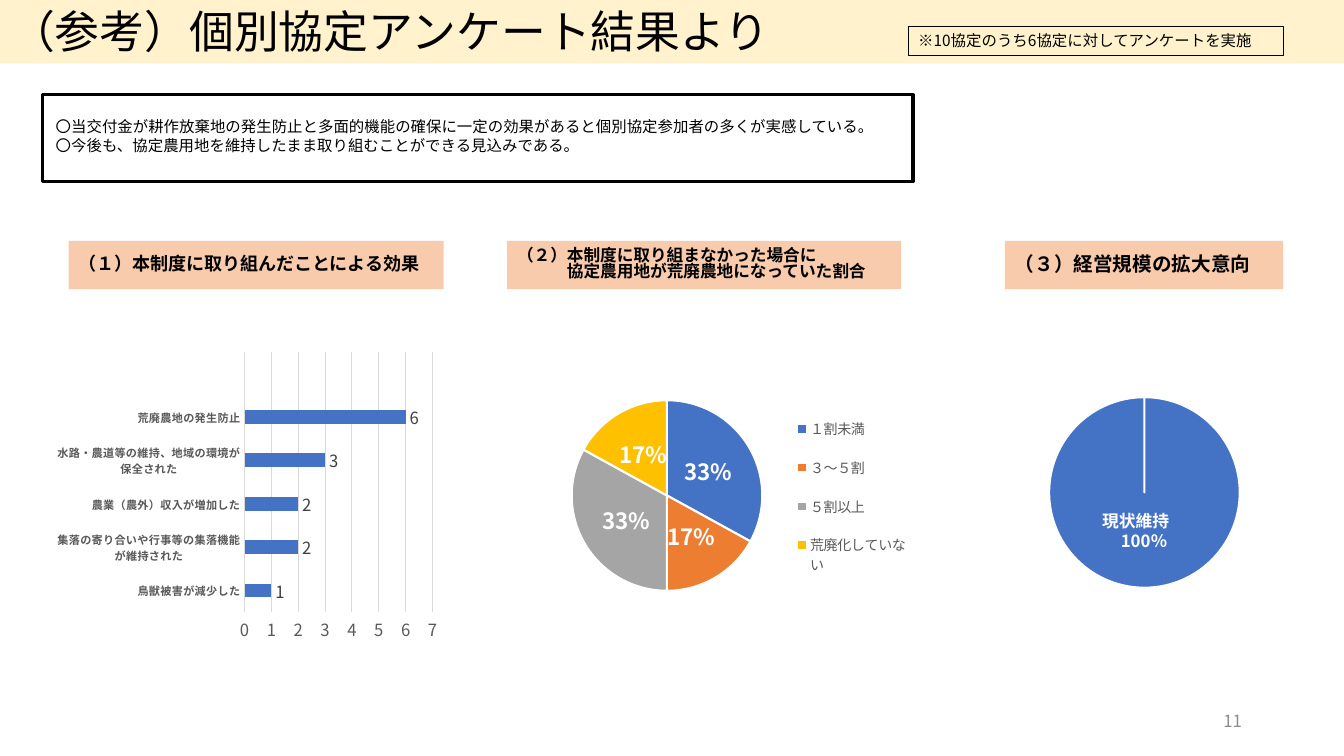
from lxml.etree import SubElement
from pptx import Presentation
from pptx.chart.data import CategoryChartData
from pptx.dml.color import RGBColor
from pptx.enum.chart import (XL_CHART_TYPE as Chart, XL_LABEL_POSITION as LabelAt,
                             XL_LEGEND_POSITION as LegendAt, XL_TICK_MARK as Tick)
from pptx.enum.shapes import MSO_SHAPE as Preset
from pptx.enum.text import MSO_ANCHOR as Anchor, PP_ALIGN as Align
from pptx.oxml import parse_xml
from pptx.oxml.ns import nsdecls, qn
from pptx.util import Pt

FONT = "Noto Sans CJK JP"
BLUE, ORANGE, GRAY, YELLOW = "4472C4", "ED7D31", "A5A5A5", "FFC000"
BLACK, WHITE, GRID, AXIS_TEXT = "000000", "FFFFFF", "D9D9D9", "595959"


def color(value):
    return RGBColor.from_string(value)


def style_font(font, size, ink=BLACK, bold=False):
    font.name, font.size, font.bold = FONT, Pt(size), bold
    font.color.rgb = color(ink)


def write(frame, text, size, ink=BLACK, bold=False, align=Align.LEFT,
          anchor=Anchor.MIDDLE, spacing=None, indents=()):
    """Fill a text frame, one paragraph a line; indents are left margins in points."""
    frame.text = text
    frame.word_wrap, frame.vertical_anchor = True, anchor
    for para in frame.paragraphs:
        para.alignment = align
        if spacing:
            para.line_spacing = spacing
        for span in para.runs:
            style_font(span.font, size, ink, bold)
            SubElement(span.font._element, qn("a:ea"), typeface=FONT)
    for para, indent in zip(frame.paragraphs, indents):
        para._p.get_or_add_pPr().set("marL", str(Pt(indent)))


def manual_layout(left, top, width, height, inner=False):
    """Layout element with its place given as fractions of the chart."""
    target = '<c:layoutTarget val="inner"/>' if inner else ""
    return parse_xml(
        f'<c:layout {nsdecls("c")}><c:manualLayout>{target}'
        '<c:xMode val="edge"/><c:yMode val="edge"/>'
        f'<c:x val="{left}"/><c:y val="{top}"/><c:w val="{width}"/><c:h val="{height}"/>'
        '</c:manualLayout></c:layout>')


class Builder:
    def __init__(self, page):
        self.page = page

    def title(self, text, place, fill, **style):
        box = self.page.shapes.title
        box.left, box.top, box.width, box.height = map(Pt, place)
        box.fill.solid()
        box.fill.fore_color.rgb = color(fill)
        write(box.text_frame, text, **style)

    def box(self, place, text="", preset=Preset.RECTANGLE, fill=None, line=None, **style):
        box = self.page.shapes.add_shape(preset, *map(Pt, place))
        box.shadow.inherit = False
        if fill:
            box.fill.solid()
            box.fill.fore_color.rgb = color(fill)
        else:
            box.fill.background()
        if line:
            box.line.color.rgb, box.line.width = color(BLACK), Pt(line)
        else:
            box.line.fill.background()
        if text:
            write(box.text_frame, text, **style)

    def text(self, place, text, **style):
        write(self.page.shapes.add_textbox(*map(Pt, place)).text_frame, text, **style)

    def chart(self, kind, place, values, plot_area):
        data = CategoryChartData()
        data.categories = list(values)
        data.add_series("回答", values.values())
        chart = self.page.shapes.add_chart(kind, *map(Pt, place), data).chart
        chart.has_title = chart.has_legend = False
        style_font(chart.font, 10)
        area = chart._chartSpace.chart.plotArea
        for old in area.findall(qn("c:layout")):
            area.remove(old)
        area.insert(0, manual_layout(*plot_area, inner=True))
        return chart

    def bar(self, place, values, plot_area):
        chart = self.chart(Chart.BAR_CLUSTERED, place, values, plot_area)
        plot = chart.plots[0]
        plot.gap_width, plot.vary_by_categories = 219, False
        fill = plot.series[0].format.fill
        fill.solid()
        fill.fore_color.rgb = color(BLUE)
        self.labels(plot, LabelAt.OUTSIDE_END, 12, "404040")
        names, scale = chart.category_axis, chart.value_axis
        for axis in (names, scale):
            axis.major_tick_mark = axis.minor_tick_mark = Tick.NONE
        style_font(names.tick_labels.font, 8, AXIS_TEXT, bold=True)
        style_font(scale.tick_labels.font, 12, AXIS_TEXT)
        scale.minimum_scale, scale.maximum_scale, scale.major_unit = 0, 7, 1
        scale.format.line.fill.background()
        for line in (names.format.line, scale.major_gridlines.format.line):
            line.color.rgb, line.width = color(GRID), Pt(0.75)
        self.asian_font(chart)

    def pie(self, place, values, plot_area, fills, legend_area=None):
        """Pie chart; with a legend area it also gets percentages and a legend."""
        chart = self.chart(Chart.PIE, place, values, plot_area)
        plot = chart.plots[0]
        plot.vary_by_categories = True
        for index, fill in enumerate(fills):
            slice_format = plot.series[0].points[index].format
            slice_format.fill.solid()
            slice_format.fill.fore_color.rgb = color(fill)
            slice_format.line.color.rgb = color(WHITE)
            slice_format.line.width = Pt(1.5)
        if legend_area:
            self.labels(plot, LabelAt.CENTER, 16, WHITE, bold=True, percent=True)
            chart.has_legend = True
            legend = chart.legend
            legend.position, legend.include_in_layout = LegendAt.RIGHT, False
            style_font(legend.font, 10, AXIS_TEXT)
            for old in legend._element.findall(qn("c:layout")):
                legend._element.remove(old)
            legend._element.find(qn("c:legendPos")).addnext(manual_layout(*legend_area))
        self.asian_font(chart)

    def labels(self, plot, position, size, ink, bold=False, percent=False):
        plot.has_data_labels = True
        labels = plot.data_labels
        labels.show_value, labels.show_percentage = not percent, percent
        labels.position = position
        if percent:
            labels.number_format, labels.number_format_is_linked = "0%", False
        style_font(labels.font, size, ink, bold)

    def asian_font(self, chart):
        for latin in list(chart._chartSpace.iter(qn("a:latin"))):
            latin.addnext(parse_xml(f'<a:ea {nsdecls("a")} typeface="{FONT}"/>'))


def main():
    deck = Presentation()
    deck.slide_width, deck.slide_height = Pt(960), Pt(540)
    slide = Builder(deck.slides.add_slide(deck.slide_layouts[5]))

    slide.title("（参考）個別協定アンケート結果より", (0, -0.7, 960, 46), "FFF2CC",
                size=32, anchor=Anchor.TOP)
    slide.box((648.7, 18.7, 267.8, 21), "※10協定のうち6協定に対してアンケートを実施",
              line=0.5, size=11, anchor=Anchor.TOP)
    slide.box((30.2, 71.3, 899.3, 51.8),
              "〇当交付金が耕作放棄地の発生防止と多面的機能の確保に一定の効果があると"
              "個別協定参加者の多くが実感している。\n"
              "〇今後も、協定農用地を維持したまま取り組むことができる見込みである。",
              preset=Preset.ROUNDED_RECTANGLE, size=11)
    slide.box((30.2, 67.7, 622, 62), line=2.25)

    captions = [
        (49, 268, "（１）本制度に取り組んだことによる効果", 12.9, 0.9),
        (362.2, 281.5, "（２）本制度に取り組まなかった場合に\n"
                       "協定農用地が荒廃農地になっていた割合", 11.9, 0.8),
        (717.8, 198.7, "（３）経営規模の拡大意向", 14, 0.9),
    ]
    for left, width, text, size, spacing in captions:
        slide.box((left, 172, width, 34.6), text, fill="F8CBAD", size=size, bold=True,
                  spacing=spacing, indents=(0, 3 * size))

    slide.bar((41, 235.4, 288, 224.6), {
        "鳥獣被害が減少した": 1,
        "集落の寄り合いや行事等の集落機能が維持された": 2,
        "農業（農外）収入が増加した": 2,
        "水路・農道等の維持、地域の環境が保全された": 3,
        "荒廃農地の発生防止": 6,
        "": None,
    }, (0.46, 0.07, 0.47, 0.83))
    slide.pie((265, 242, 388, 219.6),
              {"１割未満": 33, "３～５割": 17, "５割以上": 33, "荒廃化していない": 17},
              (0.35, 0.2, 0.39, 0.62), (BLUE, ORANGE, GRAY, YELLOW),
              legend_area=(0.78, 0.2, 0.21, 0.63))
    slide.pie((528.5, 239.8, 388, 219.6), {"1": 100}, (0.55, 0.2, 0.39, 0.62), (BLUE,))
    slide.text((773.3, 361.4, 87.8, 36), "現状維持　\n100％", size=12, ink=WHITE,
               bold=True, align=Align.CENTER, anchor=Anchor.TOP)
    slide.text((678.2, 500.4, 216, 28.8), "11", size=12, ink="8C8C8C", align=Align.RIGHT)
    deck.save("out.pptx")


if __name__ == "__main__":
    main()
